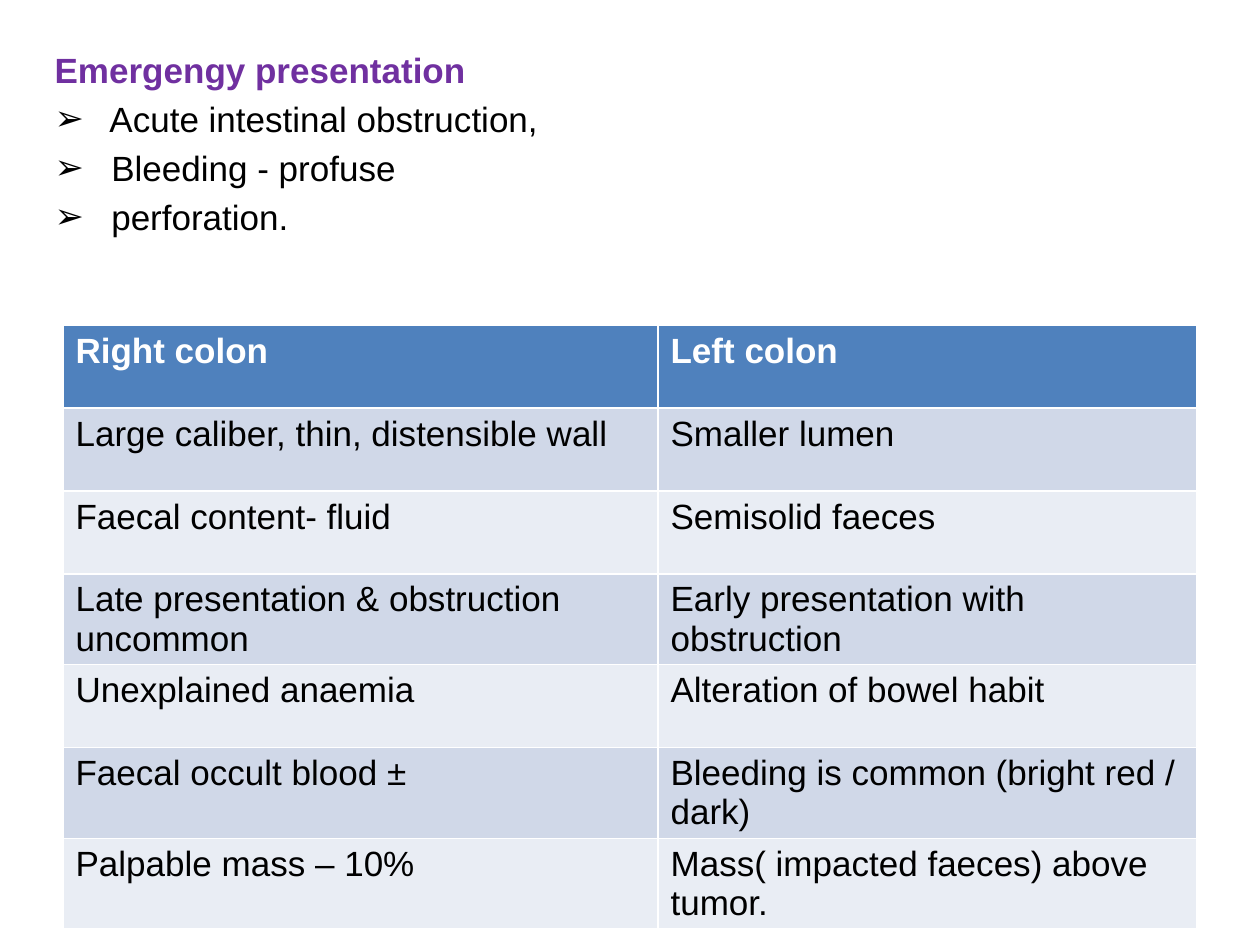
from dataclasses import dataclass

from lxml.etree import SubElement
from pptx import Presentation
from pptx.dml.color import RGBColor as Rgb
from pptx.enum.text import MSO_AUTO_SIZE as AutoSize
from pptx.oxml.ns import qn
from pptx.util import Emu, Pt

SCALE = 914400 / 126


@dataclass(frozen=True)
class Theme:
    """Colours, font and type size of the slide."""
    font: str = "Arial"
    size: int = 20
    heading: str = "7030A0"
    text: str = "000000"
    header_text: str = "FFFFFF"
    header_fill: str = "4F81BD"
    bands: tuple = ("D0D8E8", "E9EDF4")


THEME = Theme()

HEADING = "Emergengy presentation"
EMERGENCIES = [" Acute intestinal obstruction,", " Bleeding - profuse", " perforation."]
COLON_ROWS = [
    ("Right colon", "Left colon"),
    ("Large caliber, thin, distensible wall", "Smaller lumen"),
    ("Faecal content- fluid", "Semisolid faeces"),
    ("Late presentation & obstruction uncommon", "Early presentation with obstruction"),
    ("Unexplained anaemia", "Alteration of bowel habit"),
    ("Faecal occult blood ±", "Bleeding is common (bright red / dark)"),
    ("Palpable mass – 10%", "Mass( impacted faeces) above tumor."),
]
COLUMN_WIDTHS = (595, 539)
ROW_HEIGHTS = (83, 83, 83, 83, 83, 88, 83)


def px(length):
    """Turn whole pixels into EMU."""
    return Emu(round(length * SCALE))


def write(para, text, color=THEME.text, bold=False):
    """Add one formatted run to a paragraph."""
    span = para.add_run()
    span.text = text
    span.font.name = THEME.font
    span.font.size = Pt(THEME.size)
    span.font.bold = bold
    span.font.color.rgb = Rgb.from_string(color)


def set_bullet(para, char=None, indent=47):
    """Give a paragraph a hanging indent and an optional bullet."""
    props = para._p.get_or_add_pPr()
    props.set("marL", str(px(indent)))
    props.set("indent", str(-px(indent)))
    if char:
        SubElement(props, qn("a:buFont"), typeface=THEME.font)
        SubElement(props, qn("a:buChar"), char=char)
    else:
        SubElement(props, qn("a:buNone"))


def fill_body(box, heading, items):
    """Place the body placeholder and write a heading with its list."""
    box.left, box.top, box.width, box.height = map(px, (42, 42, 1176, 903))
    frame = box.text_frame
    frame.word_wrap = True
    frame.auto_size = AutoSize.NONE
    para = frame.paragraphs[0]
    set_bullet(para)
    write(para, heading, color=THEME.heading, bold=True)
    for item in items:
        para = frame.add_paragraph()
        set_bullet(para, "➢")
        write(para, item)


def add_comparison(slide, rows, left, top):
    """Add the table with a header row and banded body rows."""
    size = (sum(COLUMN_WIDTHS), sum(ROW_HEIGHTS))
    table = slide.shapes.add_table(
        len(rows), len(COLUMN_WIDTHS), *map(px, (left, top, *size))).table
    for column, width in zip(table.columns, COLUMN_WIDTHS):
        column.width = px(width)
    for index, (row, height, texts) in enumerate(zip(table.rows, ROW_HEIGHTS, rows)):
        row.height = px(height)
        header = index == 0
        fill = THEME.header_fill if header else THEME.bands[(index - 1) % 2]
        color = THEME.header_text if header else THEME.text
        for cell, text in zip(row.cells, texts):
            cell.fill.solid()
            cell.fill.fore_color.rgb = Rgb.from_string(fill)
            write(cell.text_frame.paragraphs[0], text, color=color, bold=header)


def main():
    """Build and save the slide."""
    deck = Presentation()
    deck.slide_width, deck.slide_height = px(1260), px(945)
    page = deck.slides.add_slide(deck.slide_layouts.get_by_name("Title and Content"))
    title = page.shapes.title.element
    title.getparent().remove(title)
    fill_body(page.placeholders[1], HEADING, EMERGENCIES)
    add_comparison(page, COLON_ROWS, left=63, top=325)
    deck.save("out.pptx")


if __name__ == "__main__":
    main()
